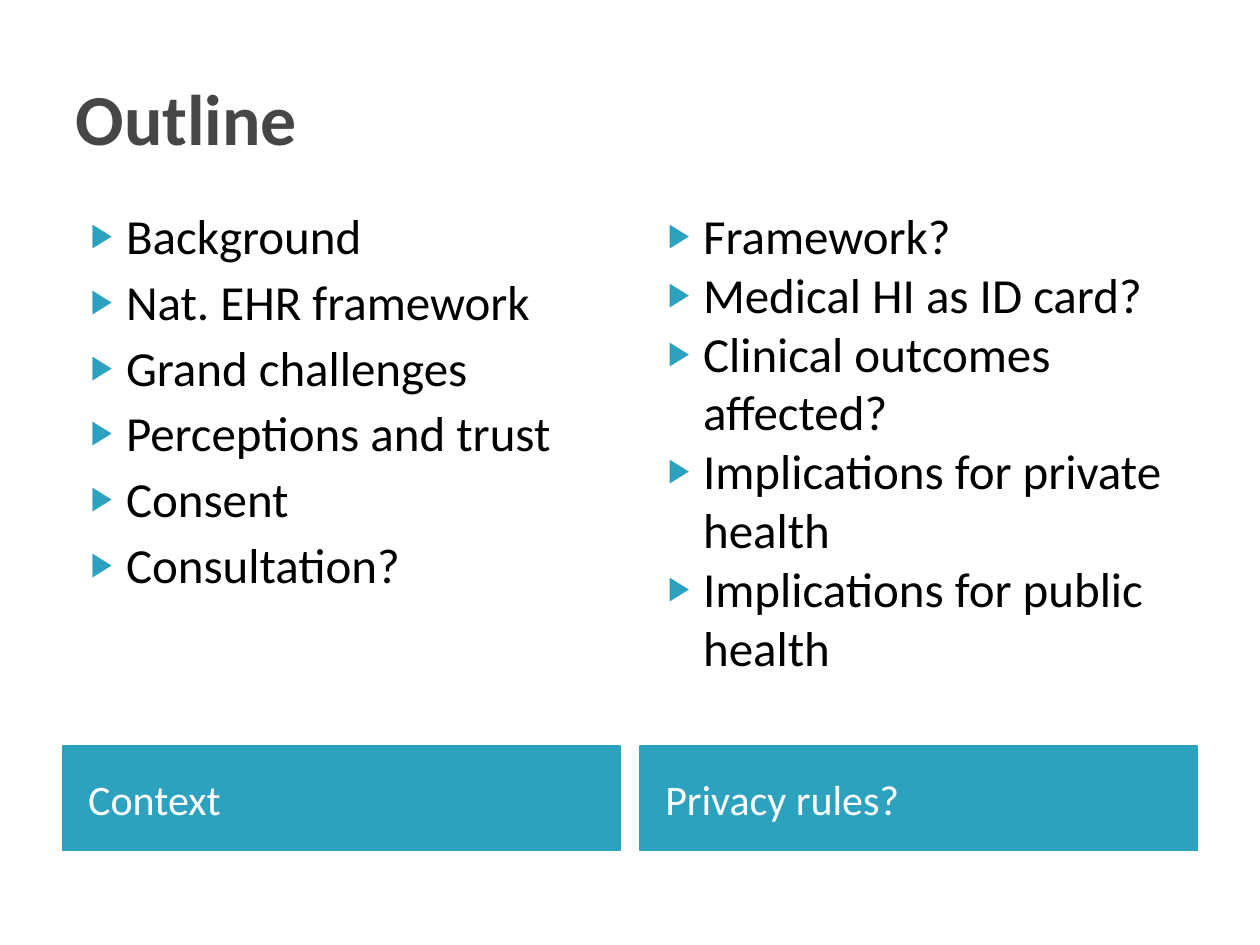
from lxml import etree
from pptx import Presentation
from pptx.dml.color import RGBColor
from pptx.enum import text
from pptx.oxml.ns import qn
from pptx.util import Inches, Pt

COLORS = {"heading": "464646", "accent": "2DA2BF", "body": "000000", "label": "FFFFFF"}
FONT = "Calibri"
COLUMN_LEFTS = (0.5, 5.08)
COLUMN_WIDTH = 4.42

# Label, space before each topic, topics
COLUMNS = [
    ("Context", 4, [
        "Background", "Nat. EHR framework", "Grand challenges",
        "Perceptions and trust", "Consent", "Consultation?",
    ]),
    ("Privacy rules?", 0, [
        "Framework?", "Medical HI as ID card?", "Clinical outcomes affected?",
        "Implications for private health", "Implications for public health",
    ]),
]


def rgb(name):
    return RGBColor.from_string(COLORS[name])


def place(holder, left, top, width, height, anchor):
    holder.left, holder.top = Inches(left), Inches(top)
    holder.width, holder.height = Inches(width), Inches(height)
    frame = holder.text_frame
    frame.word_wrap = True
    frame.auto_size = text.MSO_AUTO_SIZE.NONE
    frame.vertical_anchor = anchor
    return frame


def style(paragraph, size, color, bold=False, before=0):
    paragraph.alignment = text.PP_ALIGN.LEFT
    paragraph.space_before = Pt(before)
    font = paragraph.font
    font.name, font.size, font.bold = FONT, Pt(size), bold
    font.color.rgb = rgb(color)


def add_bullet(paragraph):
    props = paragraph._p.get_or_add_pPr()
    props.set("marL", str(Inches(0.4)))
    props.set("indent", str(Inches(-0.28)))
    bullet_color = etree.SubElement(props, qn("a:buClr"))
    etree.SubElement(bullet_color, qn("a:srgbClr"), val=COLORS["accent"])
    etree.SubElement(props, qn("a:buSzPct"), val="68000")
    etree.SubElement(props, qn("a:buChar"), char="▶")


def fill_title(holder, heading):
    frame = place(holder, 0.5, 0.3, 9, 1.25, text.MSO_ANCHOR.MIDDLE)
    frame.text = heading
    style(frame.paragraphs[0], 41, "heading", bold=True)


def fill_topics(holder, left, topics, before):
    frame = place(holder, left, 1.58, COLUMN_WIDTH, 4.31, text.MSO_ANCHOR.TOP)
    frame.text = "\n".join(topics)
    for i, paragraph in enumerate(frame.paragraphs):
        add_bullet(paragraph)
        style(paragraph, 28, "body", before=before if i else 0)


def fill_label(holder, left, label):
    frame = place(holder, left, 5.92, COLUMN_WIDTH, 0.83, text.MSO_ANCHOR.MIDDLE)
    frame.margin_left = Inches(0.2)
    frame.text = label
    style(frame.paragraphs[0], 24, "label")
    holder.fill.solid()
    holder.fill.fore_color.rgb = rgb("accent")
    holder.line.color.rgb = rgb("accent")
    holder.line.width = Pt(0.75)


def main():
    deck = Presentation()
    deck.slide_width, deck.slide_height = Inches(10), Inches(7.5)

    # Comparison layout: title, then a label and a list for each column
    slide = deck.slides.add_slide(deck.slide_layouts[3 + 1])
    title, *holders = slide.placeholders
    fill_title(title, "Outline")

    # Columns
    pairs = zip(holders[::2], holders[1::2])
    for (label_box, topic_box), left, column in zip(pairs, COLUMN_LEFTS, COLUMNS):
        label, before, topics = column
        fill_label(label_box, left, label)
        fill_topics(topic_box, left, topics, before)

    deck.save("out.pptx")


if __name__ == "__main__":
    main()
